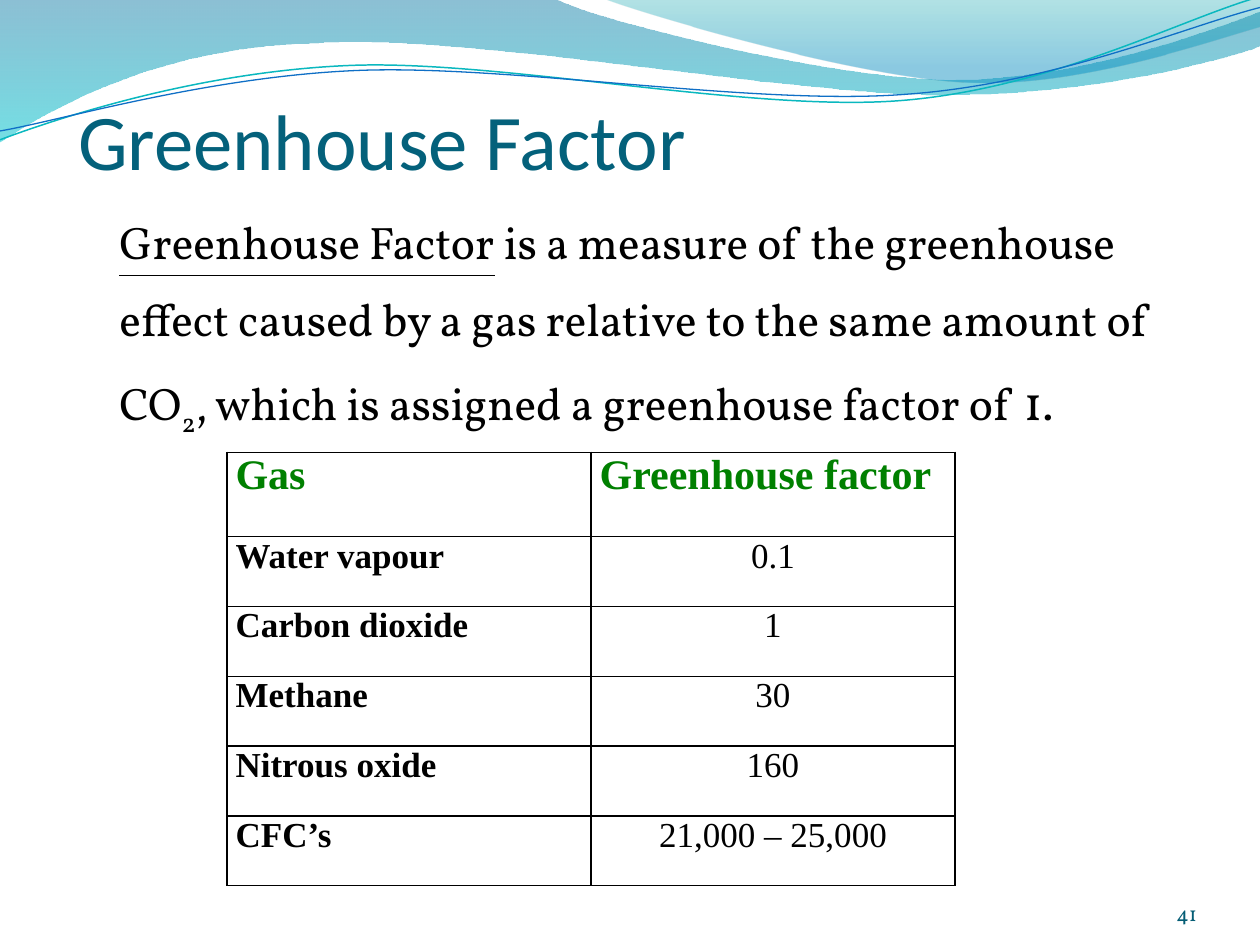
from dataclasses import dataclass, field
from math import cos, radians, sin

from lxml import etree
from pptx import Presentation
from pptx.dml.color import RGBColor
from pptx.enum import text
from pptx.oxml import ns
from pptx.util import Inches, Pt


@dataclass(frozen=True)
class Theme:
    title: str = "04617B"
    body: str = "000000"
    heading: str = "008000"
    number: str = "045D75"
    title_font: str = "Calibri"
    body_font: str = "Vollkorn"
    table_font: str = "Times New Roman"
    title_size: int = 45
    body_size: int = 26
    accent_size: int = 28
    header_size: int = 24
    cell_size: int = 20
    number_size: int = 12


@dataclass(frozen=True)
class Stop:
    position: float
    color: str
    opacity: int


@dataclass(frozen=True)
class Wave:
    """Each step holds two numbers for a line or six for a Bezier curve."""
    start: tuple
    steps: list
    stops: list = field(default_factory=list)
    line: str = ""
    width: float = 0
    rotation: float = 0


@dataclass(frozen=True)
class Style:
    font: str
    size: float
    color: str
    bold: bool = False
    underline: bool = False
    baseline: int = 0


THEME = Theme()
TILT = -2.7

WAVES = [
    Wave((0, 0), [
        (4.4, -0.01), (4.76, 0.17, 6.64, 0.63, 7.58, 0.63),
        (8.53, 0.63, 9.58, 0.26, 10, 0.09), (10.01, 0.36),
        (9.83, 0.44, 8.7, 0.76, 7.46, 0.75), (6.22, 0.75, 3.82, 0.28, 2.57, 0.34),
        (1.29, 0.36, 0.46, 0.83, -0.01, 1.13),
    ], stops=[Stop(0, "0074A1", 45), Stop(1, "00C6CF", 55)]),
    Wave((4.79, -0.01), [
        (5.09, 0.11, 6.82, 0.62, 7.69, 0.65), (8.56, 0.69, 9.61, 0.32, 10, 0.21), (10, 0),
    ], stops=[Stop(0, "00A1A9", 30), Stop(0.8, "008BBF", 45)]),
    Wave((0, 1.11), [
        (0.48, 0.93, 1.58, 0.57, 2.77, 0.52), (3.95, 0.47, 5.93, 0.89, 7.13, 0.8),
        (8.33, 0.71, 9.38, 0.15, 9.98, -0.02),
    ], line="0AB8BF", width=0.85, rotation=TILT),
    Wave((0, 1.04), [
        (0.47, 0.96, 1.64, 0.61, 2.83, 0.56), (4.03, 0.51, 5.97, 0.84, 7.17, 0.75),
        (8.36, 0.67, 9.41, 0.21, 10, 0.06),
    ], line="0F6FC6", width=0.75, rotation=TILT),
]

GASES = [
    ("Water vapour", "0.1"),
    ("Carbon dioxide", "1"),
    ("Methane", "30"),
    ("Nitrous oxide", "160"),
    ("CFC’s", "21,000 – 25,000"),
]


def turn(point: tuple, degrees: float) -> tuple:
    x, y = point
    c, s = cos(radians(degrees)), sin(radians(degrees))
    return round(x * c - y * s), round(x * s + y * c)


def draw_outline(slide, wave: Wave):
    """Build the outline on its anchor points, then bend the curved segments."""
    def place(x, y):
        return turn((Inches(x), Inches(y)), -wave.rotation)

    steps = [[place(*step[i:i + 2]) for i in range(0, len(step), 2)] for step in wave.steps]
    builder = slide.shapes.build_freeform(*place(*wave.start))
    builder.add_line_segments([step[-1] for step in steps], close=bool(wave.stops))
    ribbon = builder.convert_to_shape()
    segments = list(ribbon._element.spPr.iter(ns.qn("a:lnTo")))
    for segment, step in zip(segments, steps):
        if len(step) == 3:
            curve = etree.Element(ns.qn("a:cubicBezTo"))
            for x, y in step:
                etree.SubElement(curve, ns.qn("a:pt"),
                                 x=str(x - ribbon.left), y=str(y - ribbon.top))
            segment.getparent().replace(segment, curve)

    center = (ribbon.left + ribbon.width / 2, ribbon.top + ribbon.height / 2)
    turned = turn(center, wave.rotation)
    ribbon.left += round(turned[0] - center[0])
    ribbon.top += round(turned[1] - center[1])
    ribbon.rotation = wave.rotation
    return ribbon


def draw_wave(slide, wave: Wave) -> None:
    ribbon = draw_outline(slide, wave)
    ribbon.shadow.inherit = False
    if not wave.stops:
        ribbon.fill.background()
        ribbon.line.color.rgb = RGBColor.from_string(wave.line)
        ribbon.line.width = Pt(wave.width)
        return
    ribbon.line.fill.background()
    ribbon.fill.gradient()
    ribbon.fill.gradient_angle = 270
    for gradient_stop, stop in zip(ribbon.fill.gradient_stops, wave.stops):
        gradient_stop.position = stop.position
        gradient_stop.color.rgb = RGBColor.from_string(stop.color)
    for color, stop in zip(ribbon._element.spPr.iter(ns.qn("a:srgbClr")), wave.stops):
        etree.SubElement(color, ns.qn("a:alpha"), val=str(stop.opacity * 1000))


def add_run(paragraph, words: str, style: Style) -> None:
    run = paragraph.add_run()
    run.text = words
    font = run.font
    font.name, font.size = style.font, Pt(style.size)
    font.bold, font.underline = style.bold, style.underline
    font.color.rgb = RGBColor.from_string(style.color)
    if style.baseline:
        font._element.set("baseline", str(style.baseline * 1000))


def add_text(slide, box: tuple, insets: tuple, anchor):
    frame = slide.shapes.add_textbox(*map(Inches, box)).text_frame
    frame.word_wrap = True
    frame.vertical_anchor = anchor
    (frame.margin_left, frame.margin_top,
     frame.margin_right, frame.margin_bottom) = map(Inches, insets)
    return frame.paragraphs[0]


def fill_cell(cell, words: str, style: Style, align) -> None:
    cell.fill.background()
    cell.margin_left = cell.margin_right = Inches(0.07)
    cell.margin_top = cell.margin_bottom = 0
    paragraph = cell.text_frame.paragraphs[0]
    paragraph.alignment = align
    add_run(paragraph, words, style)
    properties = cell._tc.get_or_add_tcPr()
    for index, side in enumerate(("lnL", "lnR", "lnT", "lnB")):
        border = etree.Element(ns.qn(f"a:{side}"), w=str(Pt(1)))
        solid = etree.SubElement(border, ns.qn("a:solidFill"))
        etree.SubElement(solid, ns.qn("a:srgbClr"), val=THEME.body)
        properties.insert(index, border)


def draw_table(slide) -> None:
    height, header_height = Inches(3.44), Inches(0.67)
    table = slide.shapes.add_table(len(GASES) + 1, 2, Inches(1.8), Inches(3.59),
                                   Inches(5.78), height).table
    table.first_row = table.horz_banding = False
    for row in table.rows:
        row.height = (height - header_height) // len(GASES)
    table.rows[0].height = header_height

    header = Style(THEME.table_font, THEME.header_size, THEME.heading, bold=True)
    name = Style(THEME.table_font, THEME.cell_size, THEME.body, bold=True)
    value = Style(THEME.table_font, THEME.cell_size, THEME.body)
    left, center = text.PP_ALIGN.LEFT, text.PP_ALIGN.CENTER
    for column, heading in enumerate(("Gas", "Greenhouse factor")):
        fill_cell(table.cell(0, column), heading, header, left)
    for row, (gas, factor) in enumerate(GASES, start=1):
        fill_cell(table.cell(row, 0), gas, name, left)
        fill_cell(table.cell(row, 1), factor, value, center)


def main() -> None:
    deck = Presentation()
    deck.slide_width, deck.slide_height = Inches(10), Inches(7.5)
    slide = deck.slides.add_slide(deck.slide_layouts[6])

    # Wave decoration
    for wave in WAVES:
        draw_wave(slide, wave)

    # Title
    title = add_text(slide, (0.62, 0.62, 9, 0.86), (0, 0.05, 0, 0), text.MSO_ANCHOR.BOTTOM)
    add_run(title, "Greenhouse Factor", Style(THEME.title_font, THEME.title_size, THEME.title))

    # Definition
    definition = add_text(slide, (0.55, 1.48, 9, 2.03), (0.1, 0.05, 0.1, 0.05),
                          text.MSO_ANCHOR.TOP)
    definition.line_spacing = 1.4
    definition.space_before = Pt(6)
    indents = definition._p.get_or_add_pPr()
    indents.set("marL", str(Inches(0.3)))
    indents.set("indent", str(Inches(-0.3)))
    font, size, color = THEME.body_font, THEME.body_size, THEME.body
    plain = Style(font, size, color)
    for words, style in [
        ("\t", plain),
        ("Greenhouse Factor", Style(font, size, color, underline=True)),
        (" is a measure of the greenhouse effect caused by a gas relative to "
         "the same amount of CO", plain),
        ("2", Style(font, size, color, baseline=-25)),
        (", which is assigned a greenhouse factor of ", plain),
        ("1", Style(font, THEME.accent_size, color)),
        (".", plain),
    ]:
        add_run(definition, words, style)

    # Slide number
    number = add_text(slide, (8.67, 6.95, 0.83, 0.4), (0, 0, 0, 0), text.MSO_ANCHOR.BOTTOM)
    number.alignment = text.PP_ALIGN.RIGHT
    add_run(number, "41", Style(THEME.body_font, THEME.number_size, THEME.number))

    # Greenhouse factor by gas
    draw_table(slide)

    deck.save("out.pptx")


if __name__ == "__main__":
    main()
